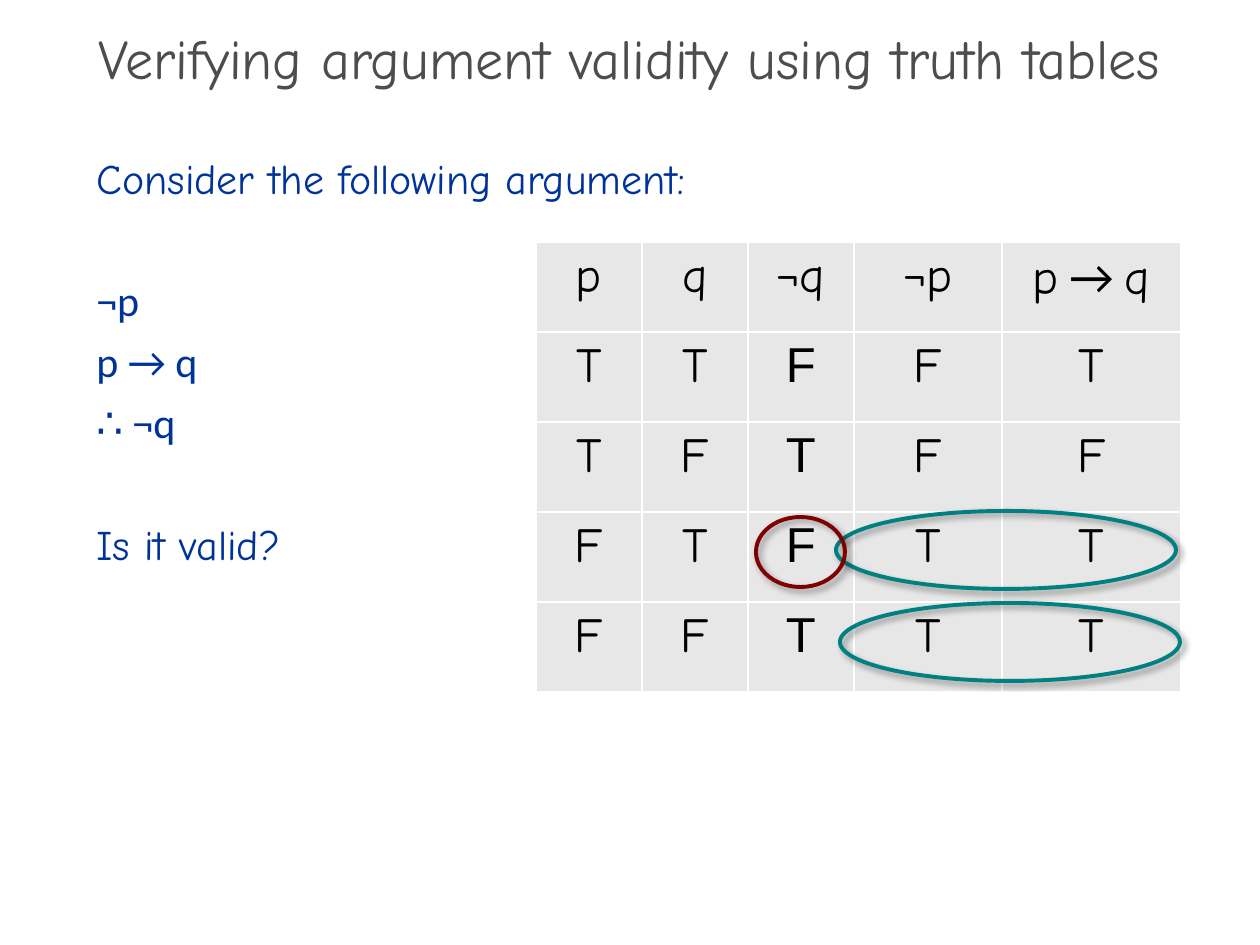
from dataclasses import dataclass

from lxml import etree
from pptx import Presentation
from pptx.dml.color import RGBColor
from pptx.enum import shapes, text
from pptx.oxml.ns import qn
from pptx.util import Emu, Pt

PX = 914400 / 126


@dataclass(frozen=True)
class Theme:
    title: str = "4D4D4D"
    body: str = "003399"
    ink: str = "000000"
    cell: str = "E7E7E7"
    border: str = "FFFFFF"
    premise: str = "008080"
    conclusion: str = "800000"
    font: str = "Comic Neue"
    logic_font: str = "Calibri"
    result_font: str = "Arial"
    title_pt: int = 32
    body_pt: int = 24
    table_pt: int = 28


THEME = Theme()


def px(*lengths):
    return [Emu(round(n * PX)) for n in lengths]


def style(font, name, size, color):
    font.name, font.size = name, Pt(size)
    font.color.rgb = RGBColor.from_string(color)


def add_text_frame(s, box):
    tf = s.shapes.add_textbox(*px(*box)).text_frame
    tf.word_wrap = True
    return tf


def add_title(s, box, words):
    tf = add_text_frame(s, box)
    tf.vertical_anchor = text.MSO_ANCHOR.MIDDLE
    p = tf.paragraphs[0]
    p.text = words
    p.alignment = text.PP_ALIGN.CENTER
    p.line_spacing = 0.7
    style(p.font, THEME.font, THEME.title_pt, THEME.title)


def add_argument(s, box, lines):
    """Each line is (words, font, gap above in points)."""
    tf = add_text_frame(s, box)
    for i, (words, font, gap) in enumerate(lines):
        p = tf.add_paragraph() if i else tf.paragraphs[0]
        p.text = words
        p.space_before, p.space_after = Pt(gap), Pt(6)
        style(p.font, font, THEME.body_pt, THEME.body)


def set_borders(cell):
    tc_pr = cell._tc.get_or_add_tcPr()
    for i, side in enumerate(("lnL", "lnR", "lnT", "lnB")):
        ln = etree.Element(qn("a:" + side), w=str(Pt(1)))
        fill = etree.SubElement(ln, qn("a:solidFill"))
        etree.SubElement(fill, qn("a:srgbClr"), val=THEME.border)
        tc_pr.insert(i, ln)


def add_truth_table(s, box, widths, rows, result_col):
    table = s.shapes.add_table(len(rows), len(widths), *px(*box)).table
    for column, width in zip(table.columns, px(*widths)):
        column.width = width
    for r, row in enumerate(rows):
        for c, words in enumerate(row):
            cell = table.cell(r, c)
            cell.fill.solid()
            cell.fill.fore_color.rgb = RGBColor.from_string(THEME.cell)
            set_borders(cell)
            p = cell.text_frame.paragraphs[0]
            p.alignment = text.PP_ALIGN.CENTER
            is_result = r > 0 and c == result_col
            font = THEME.result_font if is_result else THEME.font
            style(p.font, font, THEME.table_pt, THEME.ink)
            p.font.bold = False
            # The arrow takes the logic font, its operands the table font
            for part in words.partition(" → "):
                if part:
                    run = p.add_run()
                    run.text = part
                    if part == " → ":
                        run.font.name = THEME.logic_font


def add_ring(s, box, color):
    sp = s.shapes.add_shape(shapes.MSO_SHAPE.OVAL, *px(*box))
    sp.fill.background()
    sp.line.color.rgb = RGBColor.from_string(color)
    sp.line.width = Pt(2.25)
    # Soft shadow to the lower right
    sp.shadow.inherit = False
    effects = sp._element.spPr.find(qn("a:effectLst"))
    shadow = etree.SubElement(effects, qn("a:outerShdw"), blurRad=str(Pt(4)),
                              dist=str(Pt(3)), dir=str(45 * 60000), rotWithShape="0")
    tint = etree.SubElement(shadow, qn("a:srgbClr"), val=THEME.ink)
    etree.SubElement(tint, qn("a:alpha"), val="40000")


def add_validity_slide(prs):
    s = prs.slides.add_slide(prs.slide_layouts[6])
    add_title(s, (0, 34, 1260, 63), "Verifying argument validity using truth tables")

    # Argument on the left
    add_argument(s, (84, 146, 1081, 746), [
        ("Consider the following argument:", THEME.font, 0),
        ("¬p", THEME.logic_font, 35),
        ("p → q", THEME.logic_font, 0),
        ("∴ ¬q", THEME.logic_font, 0),
        ("Is it valid?", THEME.font, 35),
    ])

    # Truth table on the right
    header = ["p", "q", "¬q", "¬p", "p → q"]
    values = ["TTFFT", "TFTFF", "FTFTT", "FFTTT"]
    add_truth_table(s, (536, 242, 645, 450), (106, 106, 106, 148, 179),
                    [header, *values], result_col=2)

    # Rings round the true premises and the false conclusion
    add_ring(s, (840, 603, 340, 78), THEME.premise)
    add_ring(s, (836, 511, 340, 78), THEME.premise)
    add_ring(s, (756, 517, 89, 70), THEME.conclusion)


def main():
    prs = Presentation()
    prs.slide_width, prs.slide_height = px(1260, 945)
    add_validity_slide(prs)
    prs.save("out.pptx")


if __name__ == "__main__":
    main()
